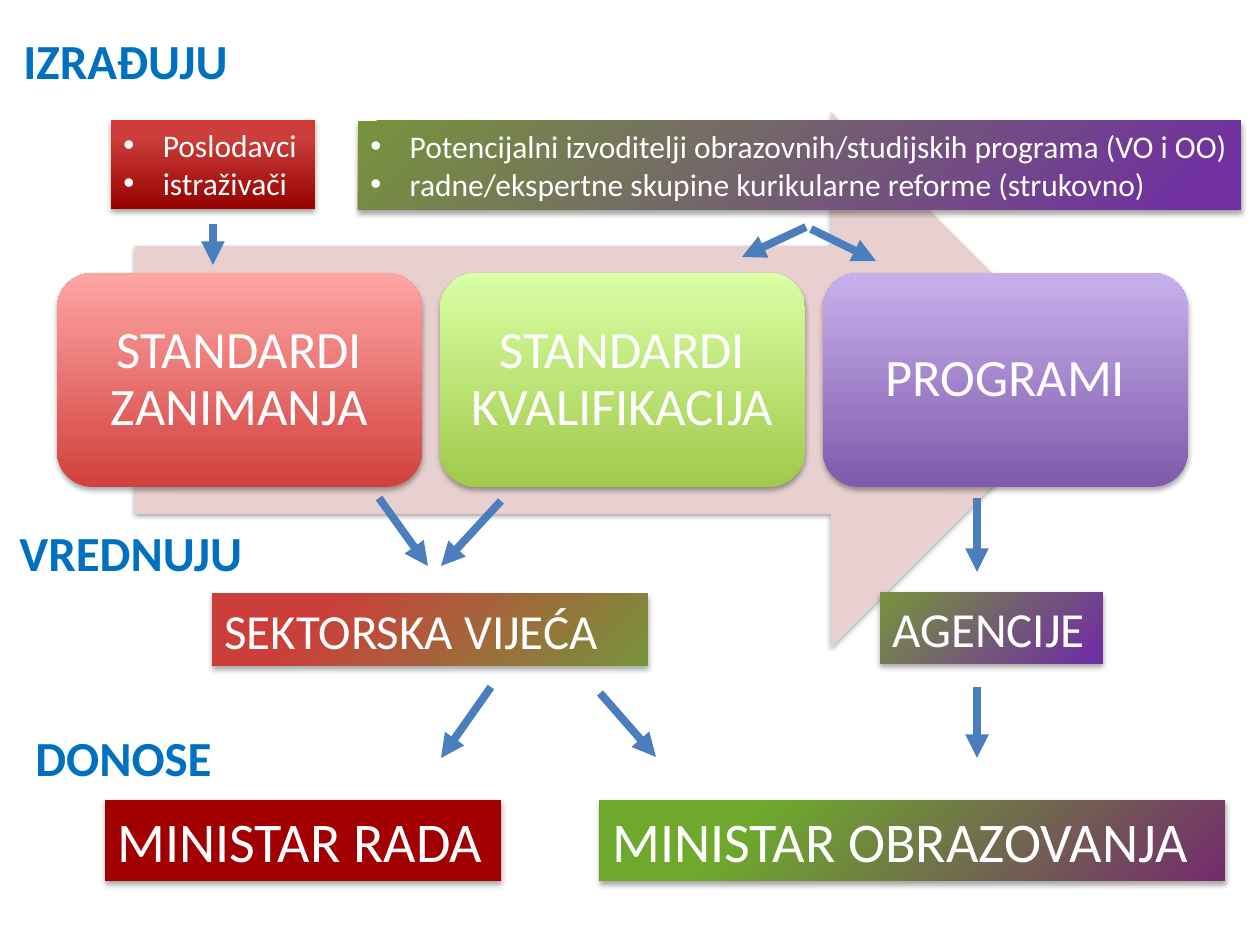
from pptx import Presentation
from pptx.dml.color import RGBColor
from pptx.enum.shapes import MSO_CONNECTOR, MSO_SHAPE
from pptx.enum.text import MSO_ANCHOR, MSO_AUTO_SIZE, PP_ALIGN
from pptx.oxml import parse_xml
from pptx.oxml.ns import nsdecls, qn
from pptx.util import Pt
from lxml.etree import SubElement

PX = 914400 / 126
FONT = "Calibri"
WHITE = RGBColor(0xFF, 0xFF, 0xFF)
STAGE_BLUE = RGBColor(0x00, 0x70, 0xC0)
FLOW_BLUE = RGBColor(0x4B, 0x7E, 0xBC)
PALE_ROSE = RGBColor(0xE8, 0xD0, 0xD0)
RED = RGBColor(0xCB, 0x3E, 0x3A)
BRIGHT_RED = RGBColor(0xCE, 0x3B, 0x37)
DARK_RED = RGBColor(0x96, 0x00, 0x00)
LABOUR_RED = RGBColor(0xA2, 0x00, 0x00)
OLIVE = RGBColor(0x77, 0x93, 0x3C)
GREEN = RGBColor(0x6E, 0xA9, 0x2D)
PURPLE = RGBColor(0x70, 0x30, 0xA0)
PLUM = RGBColor(0x74, 0x2B, 0x6D)
CARD_RED = RGBColor(0xD1, 0x40, 0x3C)
CARD_PINK = RGBColor(0xFF, 0xA6, 0xA5)
CARD_GREEN = RGBColor(0xA0, 0xCA, 0x4A)
CARD_LIME = RGBColor(0xDA, 0xFF, 0xA5)
CARD_PURPLE = RGBColor(0x7F, 0x5B, 0xAB)
CARD_LILAC = RGBColor(0xC8, 0xB0, 0xED)

UPWARD = '<a:lin ang="16200000" scaled="0"/>'
FROM_BOTTOM_RIGHT = '<a:path path="circle"><a:fillToRect l="100000" t="100000"/></a:path>'
FROM_TOP_LEFT = '<a:path path="circle"><a:fillToRect r="100000" b="100000"/></a:path>'

EMPLOYERS = ([(0, DARK_RED), (80, RED), (100, BRIGHT_RED)], UPWARD)
EDUCATION = ([(6, PURPLE), (100, OLIVE)], FROM_BOTTOM_RIGHT)
SECTOR = ([(23, RED), (100, OLIVE)], FROM_TOP_LEFT)
EDUCATION_MINISTER = ([(24, GREEN), (100, PLUM)], FROM_TOP_LEFT)

CARDS = [
    ("STANDARDI ZANIMANJA", CARD_RED, CARD_PINK),
    ("STANDARDI KVALIFIKACIJA", CARD_GREEN, CARD_LIME),
    ("PROGRAMI", CARD_PURPLE, CARD_LILAC),
]
CARD_LEFT, CARD_TOP, CARD_WIDTH, CARD_HEIGHT, CARD_GAP = 57, 273, 365, 214, 18

PROPOSERS = [
    ((111, 120, 204, 89), EMPLOYERS, ["Poslodavci", "istraživači"]),
    ((358, 121, 883, 89), EDUCATION, [
        "Potencijalni izvoditelji obrazovnih/studijskih programa (VO i OO)",
        "radne/ekspertne skupine kurikularne reforme (strukovno)",
    ]),
]
BODIES = [
    ((212, 594, 436, 72), SECTOR, "SEKTORSKA VIJEĆA", 28),
    ((600, 800, 625, 81), EDUCATION_MINISTER, "MINISTAR OBRAZOVANJA", 32),
    ((105, 800, 396, 81), LABOUR_RED, "MINISTAR RADA", 32),
    ((880, 592, 223, 72), EDUCATION, "AGENCIJE", 28),
]
STAGES = [
    ((11, 24, 239, 72), "IZRAĐUJU"),
    ((7, 516, 265, 72), "VREDNUJU"),
    ((23, 721, 215, 72), "DONOSE"),
]
FLOWS = [
    (213, 224, 213, 265),
    (379, 498, 428, 566),
    (501, 501, 441, 566),
    (806, 227, 742, 257),
    (811, 229, 876, 261),
    (977, 498, 977, 572),
    (977, 687, 977, 758),
    (491, 687, 441, 758),
    (600, 693, 656, 757),
]


def px(*lengths):
    return [round(length * PX) for length in lengths]


def fill_gradient(shape, stops, direction):
    marks = "".join(
        f'<a:gs pos="{percent * 1000}"><a:srgbClr val="{color}"/></a:gs>'
        for percent, color in stops
    )
    gradient = parse_xml(
        f'<a:gradFill {nsdecls("a")} rotWithShape="1">'
        f"<a:gsLst>{marks}</a:gsLst>{direction}</a:gradFill>"
    )
    properties = shape.fill._xPr
    properties.replace(properties.find(qn("a:solidFill")), gradient)


def cast_shadow(shape):
    shape.shadow.inherit = False
    shape._element.spPr.find(qn("a:effectLst")).append(parse_xml(
        f'<a:outerShdw {nsdecls("a")} blurRad="40000" dist="23000" dir="5400000" '
        'rotWithShape="0"><a:srgbClr val="000000"><a:alpha val="35000"/>'
        "</a:srgbClr></a:outerShdw>"
    ))


def add_panel(slide, preset, place, paint):
    panel = slide.shapes.add_shape(preset, *px(*place))
    panel.fill.solid()
    if isinstance(paint, RGBColor):
        panel.fill.fore_color.rgb = paint
    else:
        fill_gradient(panel, *paint)
    panel.line.fill.background()
    cast_shadow(panel)
    return panel


def add_bullet(paragraph):
    properties = paragraph._p.get_or_add_pPr()
    properties.set("marL", "285750")
    properties.set("indent", "-285750")
    SubElement(properties, qn("a:buFont"), typeface="Arial")
    SubElement(properties, qn("a:buChar"), char="•")


def write(shape, lines, size, color=WHITE, bold=False, bulleted=False,
          align=PP_ALIGN.LEFT):
    frame = shape.text_frame
    frame.word_wrap = True
    for index, line in enumerate(lines):
        paragraph = frame.add_paragraph() if index else frame.paragraphs[0]
        if bulleted:
            add_bullet(paragraph)
        paragraph.alignment = align
        run = paragraph.add_run()
        run.text = line
        run.font.name = FONT
        run.font.size = Pt(size)
        run.font.bold = bold
        run.font.color.rgb = color
    return frame


def add_card(slide, column, caption, bottom, top):
    left = CARD_LEFT + column * (CARD_WIDTH + CARD_GAP)
    card = add_panel(slide, MSO_SHAPE.ROUNDED_RECTANGLE,
                     (left, CARD_TOP, CARD_WIDTH, CARD_HEIGHT),
                     ([(0, bottom), (100, top)], UPWARD))
    frame = write(card, [caption], 30, align=PP_ALIGN.CENTER)
    frame.vertical_anchor = MSO_ANCHOR.MIDDLE
    frame.margin_left = frame.margin_right = px(15)[0]
    frame.paragraphs[0].line_spacing = 0.9


def add_box(slide, place, paint, lines, size, bulleted=False):
    box = add_panel(slide, MSO_SHAPE.RECTANGLE, place, paint)
    frame = write(box, lines, size, bulleted=bulleted)
    frame.vertical_anchor = MSO_ANCHOR.TOP
    frame.auto_size = MSO_AUTO_SIZE.SHAPE_TO_FIT_TEXT


def add_stage(slide, place, caption):
    stage = slide.shapes.add_textbox(*px(*place))
    frame = write(stage, [caption], 28, STAGE_BLUE, bold=True)
    frame.auto_size = MSO_AUTO_SIZE.SHAPE_TO_FIT_TEXT


def add_flow(slide, ends):
    flow = slide.shapes.add_connector(MSO_CONNECTOR.STRAIGHT, *px(*ends))
    flow.line.color.rgb = FLOW_BLUE
    flow.line.width = Pt(4.5)
    SubElement(flow.line._get_or_add_ln(), qn("a:tailEnd"), type="triangle")
    SubElement(flow._element.spPr, qn("a:effectLst"))


def main():
    deck = Presentation()
    deck.slide_width, deck.slide_height = px(1260, 945)
    slide = deck.slides.add_slide(deck.slide_layouts[6])
    add_panel(slide, MSO_SHAPE.RIGHT_ARROW, (135, 112, 964, 536), PALE_ROSE)
    for column, card in enumerate(CARDS):
        add_card(slide, column, *card)
    for place, paint, lines in PROPOSERS:
        add_box(slide, place, paint, lines, 18, bulleted=True)
    for place, paint, caption, size in BODIES:
        add_box(slide, place, paint, [caption], size)
    for place, caption in STAGES:
        add_stage(slide, place, caption)
    for ends in FLOWS:
        add_flow(slide, ends)
    deck.save("out.pptx")


if __name__ == "__main__":
    main()
